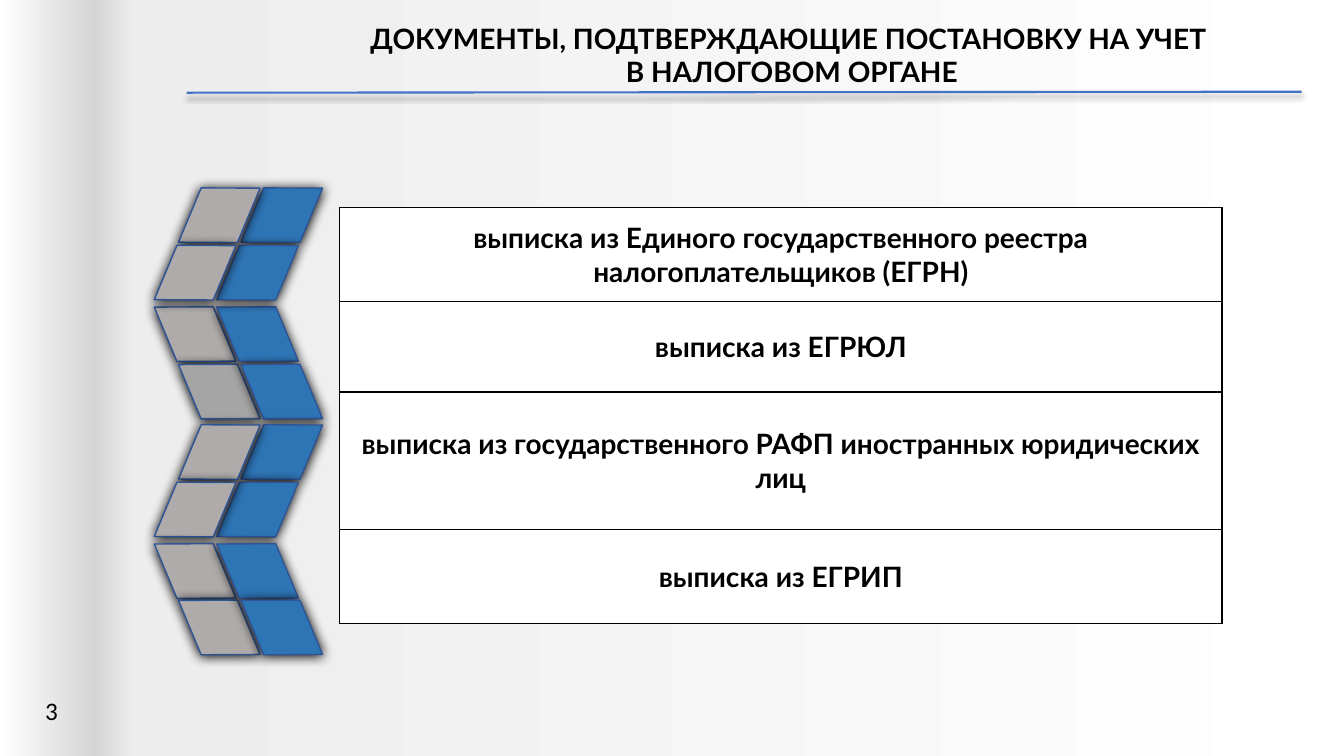
from dataclasses import dataclass

from pptx import Presentation
from pptx.dml.color import RGBColor
from pptx.enum.shapes import MSO_CONNECTOR, MSO_SHAPE
from pptx.enum.text import MSO_ANCHOR, MSO_AUTO_SIZE, PP_ALIGN
from pptx.oxml import parse_xml
from pptx.oxml.ns import nsdecls, qn
from pptx.util import Inches, Pt

BLACK, WHITE = "000000", "FFFFFF"
BLUE, GREY, DARK_GREY, OUTLINE = "2E75B6", "AFABAB", "A5A5A5", "2F5597"


@dataclass
class TileRow:
    top: float
    left: float
    rotation: float
    grey: str = GREY


@dataclass
class Extract:
    text: str
    height: float


DOWN, UP = 33.5, 326.5
NEAR, FAR = 1.45, 1.69
COLUMN_STEP = 0.62

TILE_ROWS = [
    TileRow(2.99, NEAR, DOWN),
    TileRow(3.56, FAR, DOWN, DARK_GREY),
    TileRow(1.81, FAR, UP),
    TileRow(2.38, NEAR, UP),
    TileRow(4.16, FAR, UP),
    TileRow(4.73, NEAR, UP),
    TileRow(5.34, NEAR, DOWN),
    TileRow(5.9, FAR, DOWN),
]
EXTRACTS = [
    Extract("выписка из Единого государственного реестра налогоплательщиков (ЕГРН)", 0.93),
    Extract("выписка из ЕГРЮЛ", 0.9),
    Extract("выписка из государственного РАФП иностранных юридических лиц", 1.36),
    Extract("выписка из ЕГРИП", 0.94),
]


def color(code: str) -> RGBColor:
    return RGBColor.from_string(code)


def write(frame, *lines: str, size: float = 20, font: str = "Lato",
          bold: bool = True, align=PP_ALIGN.CENTER) -> None:
    for index, line in enumerate(lines):
        para = frame.add_paragraph() if index else frame.paragraphs[0]
        para.alignment = align
        span = para.add_run()
        span.text = line
        span.font.size, span.font.name, span.font.bold = Pt(size), font, bold
        span.font.color.rgb = color(BLACK)


def add_text(page, left: float, top: float, width: float, height: float,
             *lines: str, wrap: bool = True, **style) -> None:
    box = page.shapes.add_textbox(Inches(left), Inches(top), Inches(width), Inches(height))
    box.text_frame.word_wrap = wrap
    box.text_frame.auto_size = MSO_AUTO_SIZE.SHAPE_TO_FIT_TEXT
    write(box.text_frame, *lines, **style)


def add_shadow(shape, alpha: int, blur: float, distance: float) -> None:
    shape.element.spPr.append(parse_xml(
        f'<a:effectLst {nsdecls("a")}><a:outerShdw blurRad="{Pt(blur)}" dist="{Pt(distance)}" '
        f'dir="5400000" algn="t" rotWithShape="0"><a:srgbClr val="{BLACK}">'
        f'<a:alpha val="{alpha * 1000}"/></a:srgbClr></a:outerShdw></a:effectLst>'))


def paint_background(page) -> None:
    fill = page.background.fill
    fill.gradient()
    fill.gradient_angle = 0
    stops = [(0, WHITE, 100), (7, "D5D5D5", 71), (10, "EDEDED", 100), (100, WHITE, 100)]
    marks = "".join(
        f'<a:gs pos="{position * 1000}"><a:srgbClr val="{code}">'
        f'<a:alpha val="{alpha * 1000}"/></a:srgbClr></a:gs>'
        for position, code, alpha in stops)
    stop_list = page.element.find(".//" + qn("a:gsLst"))
    stop_list.getparent().replace(
        stop_list, parse_xml(f'<a:gsLst {nsdecls("a")}>{marks}</a:gsLst>'))


def add_title_line(page) -> None:
    line = page.shapes.add_connector(MSO_CONNECTOR.STRAIGHT, Inches(1.85), Inches(0.92),
                                     Inches(12.91), Inches(0.91))
    line.line.color.rgb = color("4472C4")
    line.line.width = Pt(1.5)
    add_shadow(line, alpha=40, blur=4, distance=3)


def add_tile(group, left: float, row: TileRow, fill: str) -> None:
    tile = group.shapes.add_shape(MSO_SHAPE.FLOWCHART_DECISION, Inches(left), Inches(row.top),
                                  Inches(0.97), Inches(0.65))
    tile.rotation = row.rotation
    tile.fill.solid()
    tile.fill.fore_color.rgb = color(fill)
    tile.line.color.rgb = color(OUTLINE)
    tile.line.width = Pt(1)
    add_shadow(tile, alpha=100, blur=8.5, distance=1)


def add_zigzag(page) -> None:
    group = page.shapes.add_group_shape()
    # Bands of two rows, drawn column by column
    for start in range(0, len(TILE_ROWS), 2):
        band = TILE_ROWS[start:start + 2]
        grey = [(row.left, row, row.grey) for row in band]
        blue = [(row.left + COLUMN_STEP, row, BLUE) for row in band]
        for tile in (grey + blue if band[0].rotation == DOWN else blue + grey):
            add_tile(group, *tile)


def add_borders(cell) -> None:
    properties = cell._tc.get_or_add_tcPr()
    for index, side in enumerate("LRTB"):
        properties.insert(index, parse_xml(
            f'<a:ln{side} {nsdecls("a")} w="{Pt(1)}"><a:solidFill>'
            f'<a:srgbClr val="{BLACK}"/></a:solidFill></a:ln{side}>'))


def add_extract_table(page) -> None:
    height = sum(extract.height for extract in EXTRACTS)
    table = page.shapes.add_table(len(EXTRACTS), 1, Inches(3.37), Inches(2.06),
                                  Inches(8.75), Inches(height)).table
    table.first_row = table.horz_banding = False
    for row, extract in zip(table.rows, EXTRACTS):
        row.height = Inches(extract.height)
        cell = row.cells[0]
        cell.vertical_anchor = MSO_ANCHOR.MIDDLE
        cell.fill.solid()
        cell.fill.fore_color.rgb = color(WHITE)
        add_borders(cell)
        write(cell.text_frame, extract.text)


def main() -> None:
    deck = Presentation()
    deck.slide_width, deck.slide_height = Inches(13.33), Inches(7.5)
    page = deck.slides.add_slide(deck.slide_layouts[6])
    paint_background(page)

    # Heading and page number
    add_text(page, 2.57, 0.16, 10.57, 0.77,
             "ДОКУМЕНТЫ, ПОДТВЕРЖДАЮЩИЕ ПОСТАНОВКУ НА УЧЕТ ", "В НАЛОГОВОМ ОРГАНЕ")
    add_title_line(page)
    add_text(page, 0.35, 6.85, 0.33, 0.4, "3", wrap=False, size=18, font="Calibri",
             bold=False, align=PP_ALIGN.LEFT)

    # Zigzag ribbon and list of documents
    add_zigzag(page)
    add_extract_table(page)
    deck.save("out.pptx")


if __name__ == "__main__":
    main()
